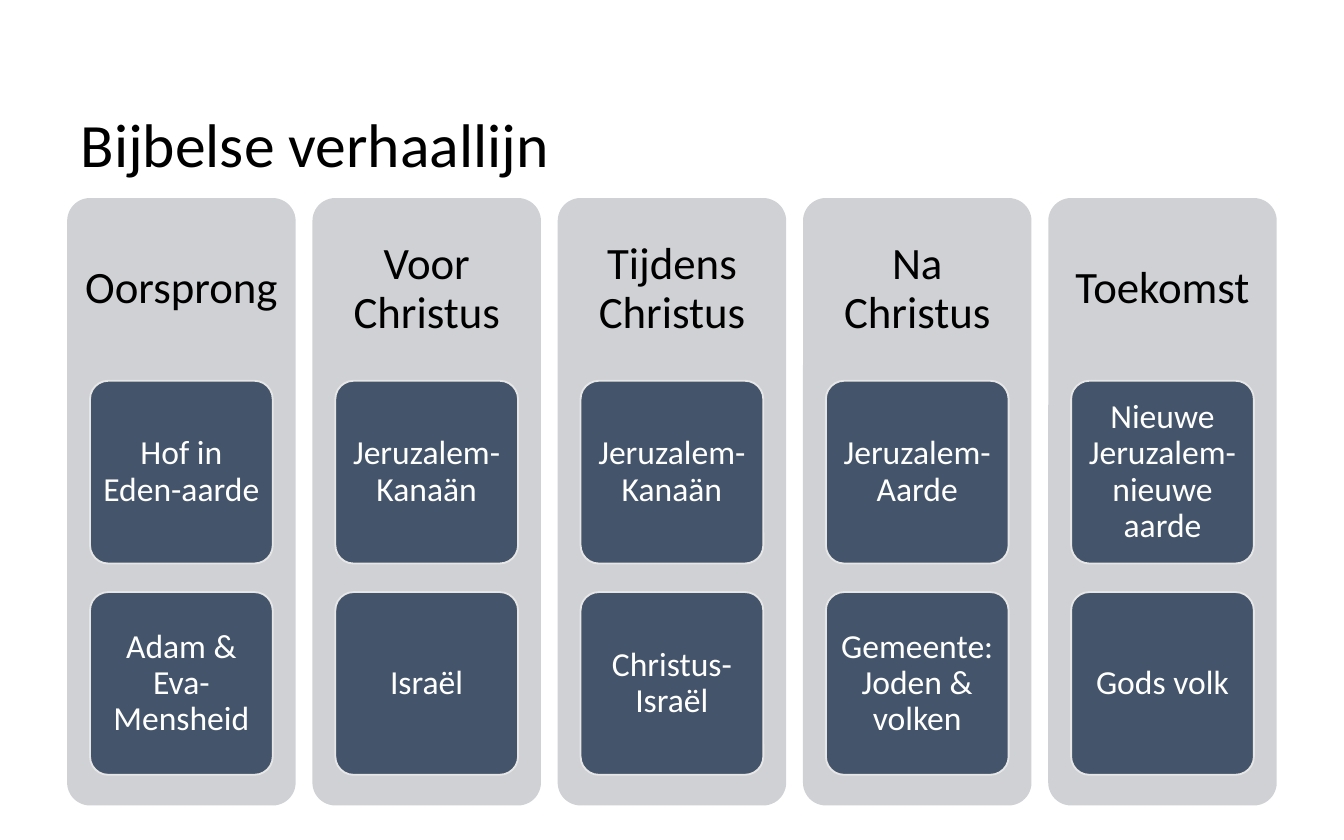
from dataclasses import dataclass

from pptx import Presentation
from pptx.dml.color import RGBColor
from pptx.enum import shapes as es, text as et
from pptx.util import Pt

BLACK = RGBColor(0x00, 0x00, 0x00)
WHITE = RGBColor(0xFF, 0xFF, 0xFF)
GREY = RGBColor(0xCF, 0xD1, 0xD4)
NAVY = RGBColor(0x44, 0x54, 0x6A)
PALE = RGBColor(0xE7, 0xE6, 0xE6)

FONT = "Calibri"

# Grid, in points
LEFT, TOP = 36, 106.1
PITCH = 131.4
WIDE, TALL = 122.4, 325.4
HEAD = 97.9
CARD = 97.9
STEP = 113.2


@dataclass
class Era:
    name: str
    place: str
    people: str


ERAS = [
    Era("Oorsprong", "Hof in Eden-aarde", "Adam & Eva-Mensheid"),
    Era("Voor Christus", "Jeruzalem-Kanaän", "Israël"),
    Era("Tijdens Christus", "Jeruzalem-Kanaän", "Christus-Israël"),
    Era("Na Christus", "Jeruzalem-Aarde", "Gemeente: Joden & volken"),
    Era("Toekomst", "Nieuwe Jeruzalem-nieuwe aarde", "Gods volk"),
]


def write(shape, words: str, size: float, color: RGBColor,
          align=et.PP_ALIGN.CENTER, pad: tuple = (7.2, 7.2)) -> None:
    """Fill a shape with one paragraph, centred vertically."""
    frame = shape.text_frame
    frame.text = words
    frame.word_wrap = True
    frame.auto_size = et.MSO_AUTO_SIZE.NONE
    frame.vertical_anchor = et.MSO_ANCHOR.MIDDLE
    frame.margin_left = frame.margin_right = Pt(pad[0])
    frame.margin_top = frame.margin_bottom = Pt(pad[1])
    para = frame.paragraphs[0]
    para.alignment = align
    para.line_spacing = 0.9
    para.font.name = FONT
    para.font.size = Pt(size)
    para.font.color.rgb = color


def add_box(slide, x: float, y: float, w: float, h: float, fill: RGBColor):
    """Draw a rounded box without line or shadow."""
    box = slide.shapes.add_shape(es.MSO_SHAPE.ROUNDED_RECTANGLE,
                                 Pt(x), Pt(y), Pt(w), Pt(h))
    box.adjustments[0] = 0.1
    box.shadow.inherit = False
    box.fill.solid()
    box.fill.fore_color.rgb = fill
    box.line.fill.background()
    return box


def add_era(slide, era: Era, x: float) -> None:
    """Draw one column: panel, heading and two cards."""
    add_box(slide, x, TOP, WIDE, TALL, GREY)
    head = slide.shapes.add_textbox(Pt(x), Pt(TOP), Pt(WIDE), Pt(HEAD))
    write(head, era.name, 24, BLACK)

    for row, words in enumerate((era.place, era.people)):
        card = add_box(slide, x + (WIDE - CARD) / 2, TOP + HEAD + row * STEP,
                       CARD, CARD, NAVY)
        card.line.color.rgb = PALE
        card.line.width = Pt(1)
        write(card, words, 18, WHITE, pad=(3.4, 2.7))


def main() -> None:
    deck = Presentation()
    deck.slide_width, deck.slide_height = Pt(720), Pt(450)
    slide = deck.slides.add_slide(deck.slide_layouts[5])

    # Title
    title = slide.shapes.title
    title.left, title.top = Pt(LEFT), Pt(44)
    title.width, title.height = Pt(648), Pt(70)
    write(title, "Bijbelse verhaallijn", 33, BLACK,
          et.PP_ALIGN.LEFT, pad=(7.2, 3.6))

    # Columns
    for col, era in enumerate(ERAS):
        add_era(slide, era, LEFT + col * PITCH)

    deck.save("out.pptx")


if __name__ == "__main__":
    main()
